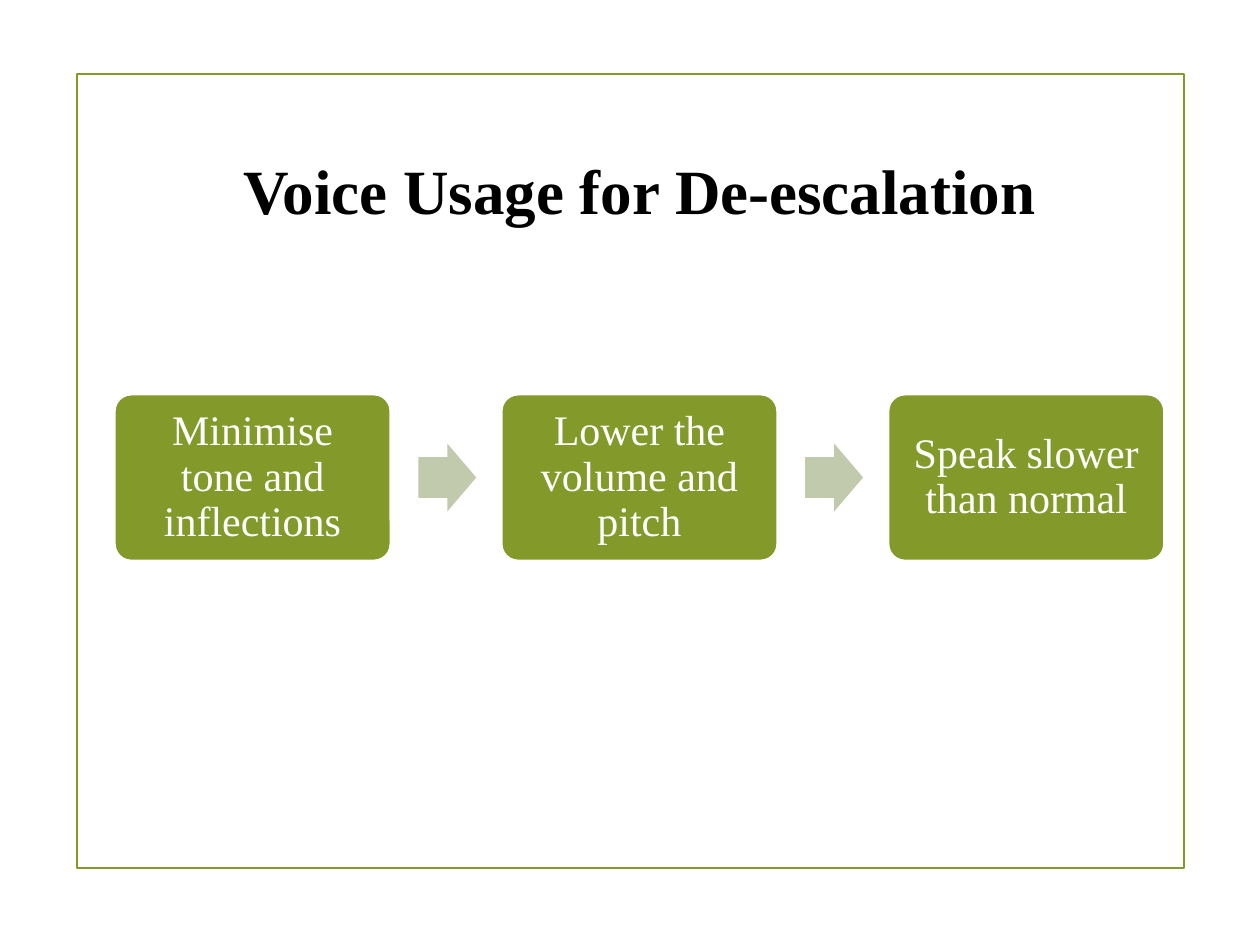
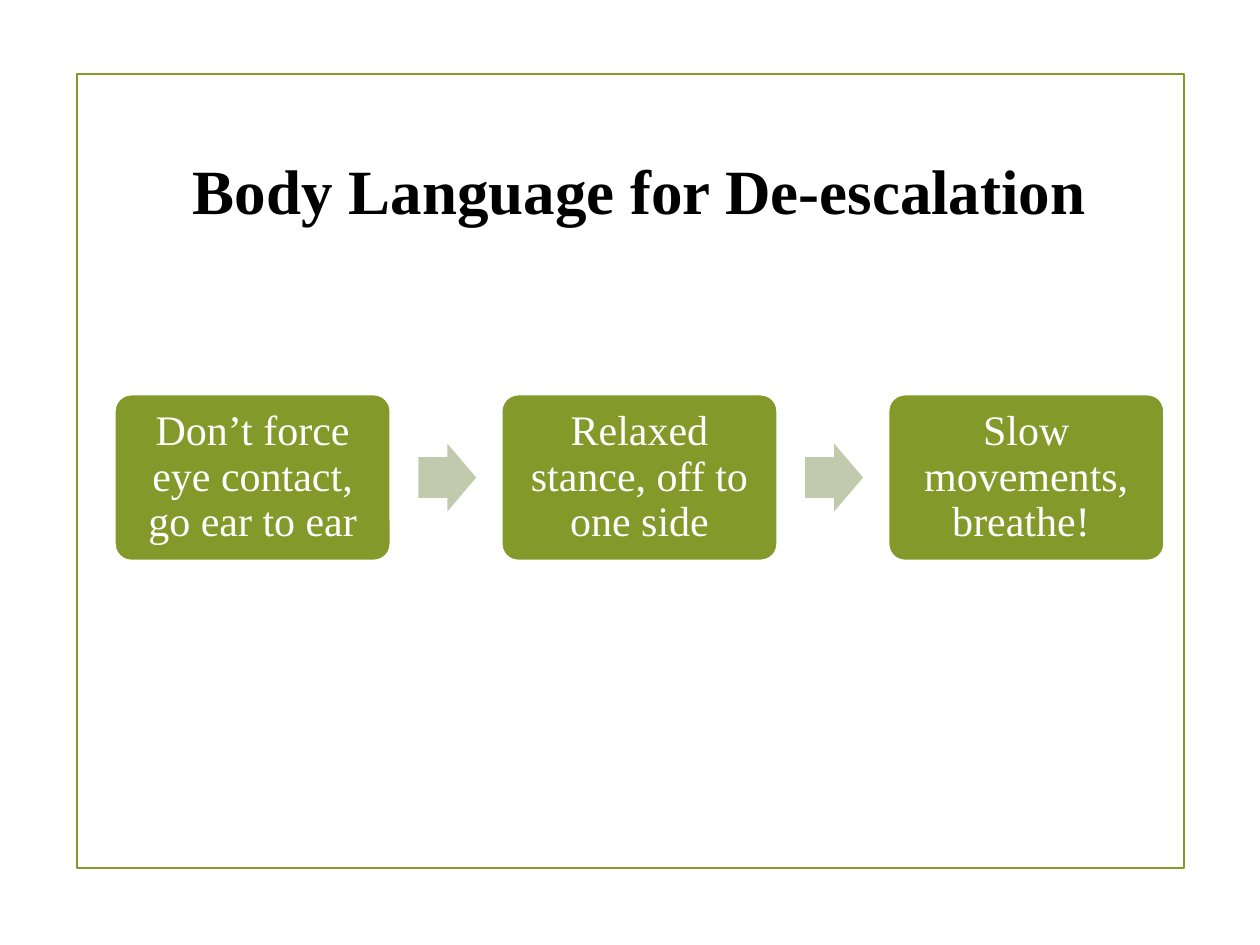
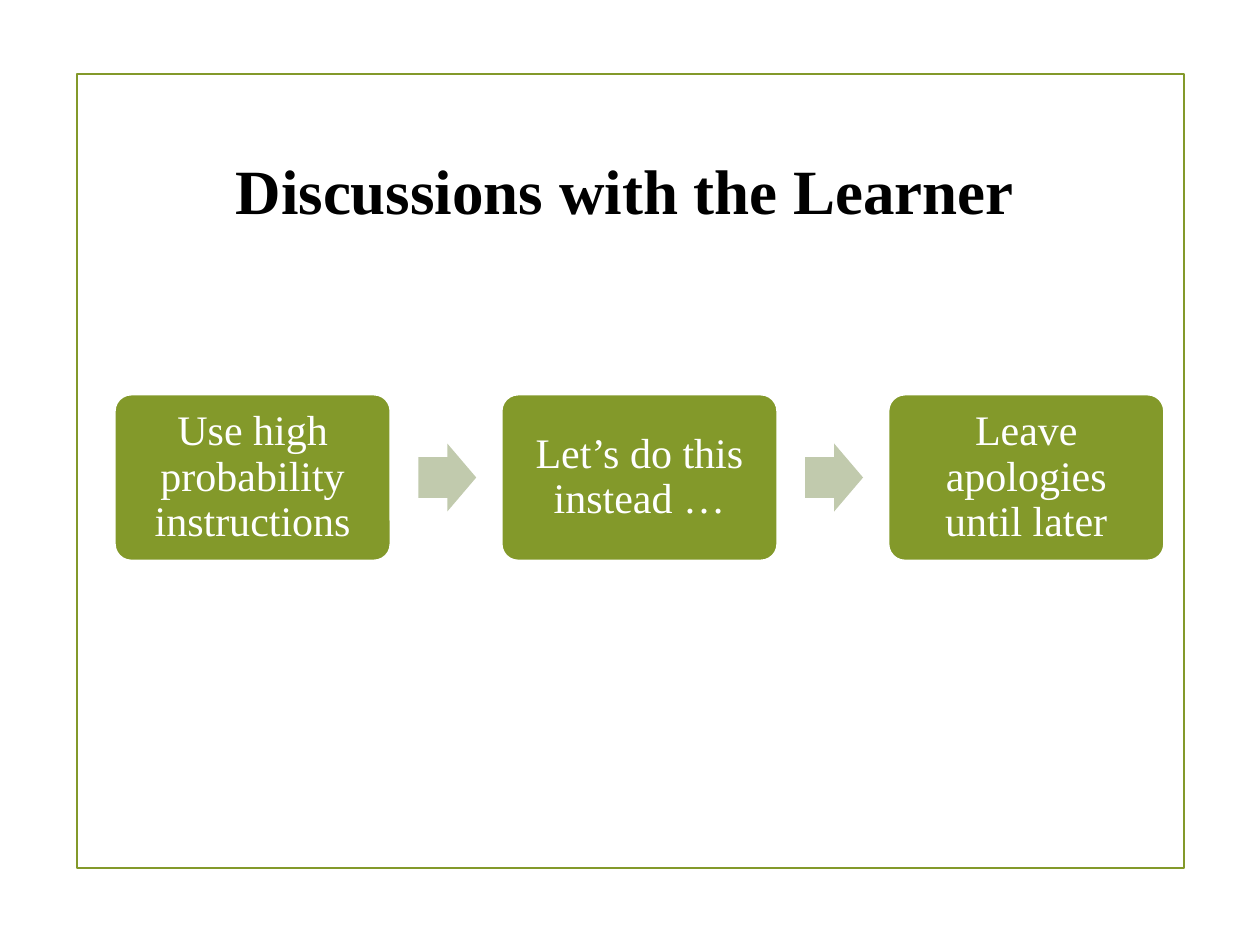
from pptx import Presentation
from pptx.dml.color import RGBColor
from pptx.enum.shapes import MSO_SHAPE
from pptx.enum.text import MSO_ANCHOR, PP_ALIGN
from pptx.util import Inches, Pt

FONT = "Times New Roman"
GREEN = "83992A"
PALE_GREEN = "C1CAAD"
WHITE = "FFFFFF"
BLACK = "000000"

FRAME_BOX = (0.61, 0.59, 8.79, 6.3)
STEPS_BOX = (0.91, 3.13, 8.33, 1.32)
WIDE_TITLE_BOX = (1.06, 1.15, 8.03, 0.71)
NARROW_TITLE_BOX = (1.69, 1.15, 6.54, 0.71)

STEP_WIDTH = 2.19
ARROW_OFFSET = 0.22
ARROW_WIDTH, ARROW_HEIGHT = 0.46, 0.54

SLIDES = [
    ("Voice Usage for De-escalation", WIDE_TITLE_BOX,
     ["Minimise tone and inflections", "Lower the volume and pitch",
      "Speak slower than normal"]),
    ("Body Language for De-escalation", WIDE_TITLE_BOX,
     ["Don’t force eye contact, go ear to ear",
      "Relaxed stance, off to one side", "Slow movements, breathe! "]),
    ("Discussions with the Learner", NARROW_TITLE_BOX,
     ["Use high probability instructions", "Let’s do this instead …",
      "Leave apologies until later"]),
]


def color(value):
    return RGBColor.from_string(value)


def add_preset(page, preset, box, fill=None, line=None, adjustments=()):
    shape = page.shapes.add_shape(preset, *map(Inches, box))
    shape.shadow.inherit = False
    for index, value in enumerate(adjustments):
        shape.adjustments[index] = value
    if fill:
        shape.fill.solid()
        shape.fill.fore_color.rgb = color(fill)
    else:
        shape.fill.background()
    if line:
        shape.line.color.rgb = color(line)
        shape.line.width = Pt(1.25)
    else:
        shape.line.fill.background()
    return shape


def write(frame, text, size, ink, bold=False):
    frame.word_wrap = True
    para = frame.paragraphs[0]
    para.alignment = PP_ALIGN.CENTER
    span = para.add_run()
    span.text = text
    span.font.name = FONT
    span.font.size = Pt(size)
    span.font.bold = bold
    span.font.color.rgb = color(ink)
    return para


def add_frame(page, box):
    add_preset(page, MSO_SHAPE.RECTANGLE, box, line=GREEN)


def add_title(page, box, text):
    title = page.shapes.add_textbox(*map(Inches, box))
    write(title.text_frame, text, 36, BLACK, bold=True)


def add_step(page, box, text):
    step = add_preset(page, MSO_SHAPE.ROUNDED_RECTANGLE, box, GREEN, WHITE, [0.1])
    frame = step.text_frame
    frame.margin_left = frame.margin_right = Inches(0.1)
    frame.margin_top = frame.margin_bottom = Inches(0.1)
    frame.vertical_anchor = MSO_ANCHOR.MIDDLE
    write(frame, text, 24, WHITE).line_spacing = 0.9


def add_steps(page, box, labels):
    left, top, width, height = box
    pitch = (width - STEP_WIDTH) / (len(labels) - 1)
    arrow_top = top + (height - ARROW_HEIGHT) / 2
    for index, label in enumerate(labels):
        step_left = left + index * pitch
        if index:
            arrow_left = step_left - pitch + STEP_WIDTH + ARROW_OFFSET
            add_preset(page, MSO_SHAPE.RIGHT_ARROW,
                       (arrow_left, arrow_top, ARROW_WIDTH, ARROW_HEIGHT),
                       PALE_GREEN, adjustments=[0.6, 0.5])
        add_step(page, (step_left, top, STEP_WIDTH, height), label)


def add_process_slide(deck, title, title_box, labels):
    page = deck.slides.add_slide(deck.slide_layouts[6])
    add_frame(page, FRAME_BOX)
    add_steps(page, STEPS_BOX, labels)
    add_title(page, title_box, title)


def main():
    deck = Presentation()
    deck.slide_width = Inches(10)
    deck.slide_height = Inches(7.5)
    for title, title_box, labels in SLIDES:
        add_process_slide(deck, title, title_box, labels)
    deck.save("out.pptx")


if __name__ == "__main__":
    main()
